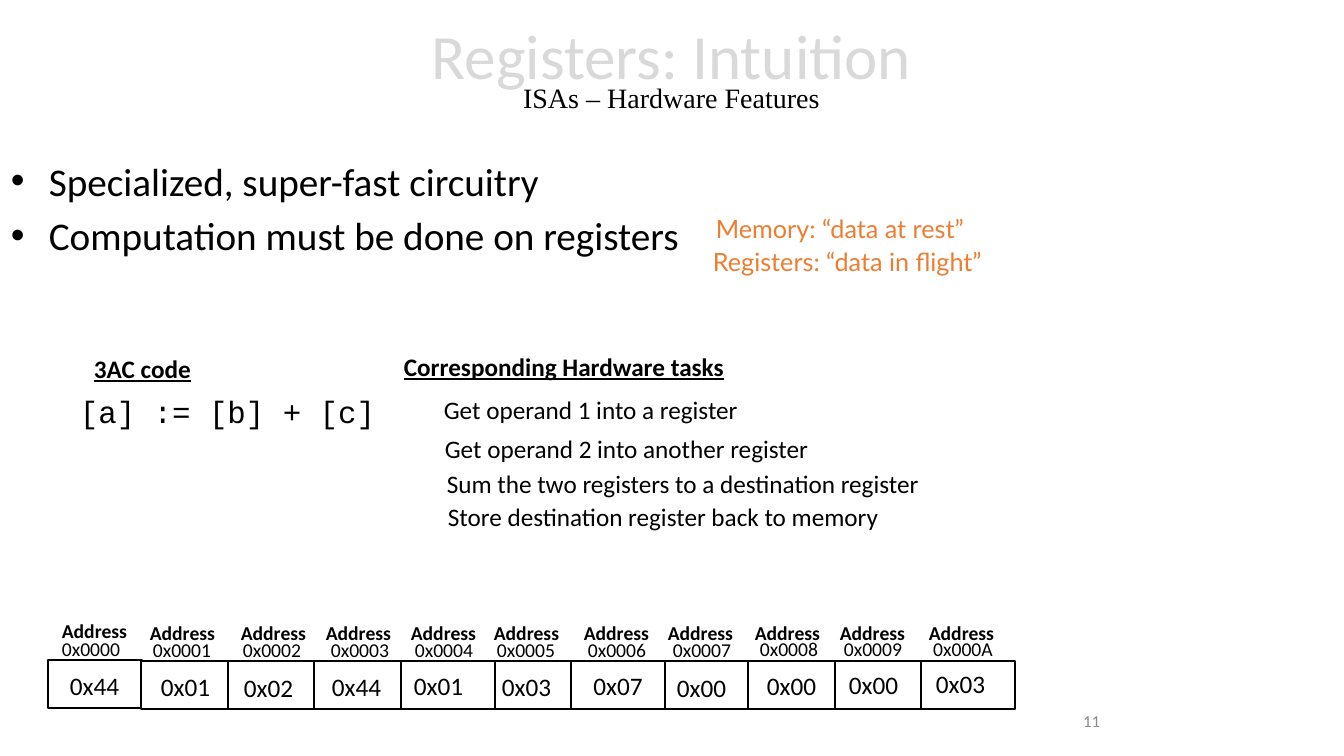
"""Build the slide on registers, their hardware tasks and a row of memory."""
from dataclasses import dataclass

from lxml import etree
from pptx import Presentation
from pptx import util as u
from pptx.dml.color import RGBColor
from pptx.enum import shapes, text


@dataclass(frozen=True)
class Theme:
    """Colours, fonts and type sizes."""
    ink: str = "000000"
    paper: str = "FFFFFF"
    heading: str = "D9D9D9"
    accent: str = "ED7D31"
    muted: str = "8C8C8C"
    sans: str = "Calibri"
    serif: str = "Times New Roman"
    mono: str = "Courier New"
    aside: str = "Lato"
    title: int = 45
    point: int = 28
    code: int = 22
    subtitle: int = 20
    body: int = 18
    label: int = 14
    number: int = 12


def px(length):
    """Turn pixels into EMU."""
    return u.Emu(round(length * 914400 / 100.8))


class Deck:
    """Holds the style and the current slide."""

    def __init__(self, theme):
        """Start a presentation with one title-only slide."""
        self.theme = theme
        self.prs = Presentation()
        self.prs.slide_width, self.prs.slide_height = px(1344), px(756)
        self.slide = self.prs.slides.add_slide(self.prs.slide_layouts[5])

    def run(self, paragraph, words, size, color=None, font=None, strong=False, underline=False):
        """Add one formatted run."""
        run = paragraph.add_run()
        run.text = words
        run.font.size = u.Pt(size)
        run.font.name = font or self.theme.sans
        run.font.color.rgb = RGBColor.from_string(color or self.theme.ink)
        run.font.bold = strong
        run.font.underline = underline

    def title(self, heading, subtitle):
        """Fill the title placeholder with a heading and a subtitle."""
        holder = self.slide.shapes.title
        holder.left, holder.top, holder.width, holder.height = px(0), px(2), px(1343), px(146)
        frame = holder.text_frame
        frame.vertical_anchor = text.MSO_ANCHOR.MIDDLE
        frame.auto_size = text.MSO_AUTO_SIZE.NONE
        line = frame.paragraphs[0]
        line.alignment = text.PP_ALIGN.CENTER
        line.line_spacing = 0.7
        self.run(line, heading, self.theme.title, self.theme.heading)
        line.add_line_break()
        self.run(line, subtitle, self.theme.subtitle, font=self.theme.serif)

    def frame(self, x, y, w, h, wrap=True):
        """Add an empty text box and return its text frame."""
        frame = self.slide.shapes.add_textbox(px(x), px(y), px(w), px(h)).text_frame
        frame.word_wrap = wrap
        return frame

    def text(self, x, y, w, h, words, size, wrap=True, **style):
        """Add a single left-aligned line of text."""
        frame = self.frame(x, y, w, h, wrap)
        frame.auto_size = text.MSO_AUTO_SIZE.SHAPE_TO_FIT_TEXT
        self.run(frame.paragraphs[0], words, size, **style)

    def label(self, x, y, w, words, strong=False):
        """Add a centred label without side margins."""
        frame = self.frame(x, y, w, 35)
        frame.margin_left = frame.margin_right = 0
        frame.paragraphs[0].alignment = text.PP_ALIGN.CENTER
        self.run(frame.paragraphs[0], words, self.theme.label, strong=strong)

    def page_number(self, x, y, w, h, number):
        """Add the right-aligned page number."""
        frame = self.frame(x, y, w, h)
        frame.vertical_anchor = text.MSO_ANCHOR.MIDDLE
        frame.paragraphs[0].alignment = text.PP_ALIGN.RIGHT
        self.run(frame.paragraphs[0], number, self.theme.number, self.theme.muted)

    def bullets(self, x, y, w, h, points):
        """Add a bulleted list."""
        frame = self.frame(x, y, w, h)
        for i, point in enumerate(points):
            line = frame.add_paragraph() if i else frame.paragraphs[0]
            line.space_before = u.Pt(5)
            props = line._p.get_or_add_pPr()
            props.set("marL", str(px(38)))
            props.set("indent", str(-px(38)))
            main = props.nsmap["a"]
            etree.SubElement(props, f"{{{main}}}buFont", typeface="Arial")
            etree.SubElement(props, f"{{{main}}}buChar", char="•")
            self.run(line, point, self.theme.point)

    def cell(self, x, y, words=""):
        """Add one memory cell."""
        cell = self.slide.shapes.add_shape(
            shapes.MSO_SHAPE.RECTANGLE, px(x), px(y), px(94), px(48))
        cell.shadow.inherit = False
        cell.fill.solid()
        cell.fill.fore_color.rgb = RGBColor.from_string(self.theme.paper)
        cell.line.color.rgb = RGBColor.from_string(self.theme.ink)
        cell.line.width = u.Pt(1)
        if words:
            cell.text_frame.vertical_anchor = text.MSO_ANCHOR.MIDDLE
            cell.text_frame.paragraphs[0].alignment = text.PP_ALIGN.CENTER
            self.run(cell.text_frame.paragraphs[0], words, self.theme.body)


TASKS = [
    (434, 389, "Get operand 1 into a register"),
    (435, 428, "Get operand 2 into another register"),
    (437, 463, "Sum the two registers to a destination register"),
    (438, 496, "Store destination register back to memory"),
]
ASIDES = [(706, 208, "Memory: “data at rest”"), (703, 241, "Registers: “data in flight”")]
HEADINGS = [(394, 346, "Corresponding Hardware tasks"), (84, 348, "3AC code")]
CELL_LEFTS = [48, 141, 228, 314, 401, 491, 571, 661, 748, 835, 921]
STACKING = [5, 0, 1, 2, 3, 4, 7, 8, 9, 10, 6]
CENTRED = 6
MEMORY = [
    (55, 614, 59, 632, 60, 665, "0x44"),
    (143, 616, 150, 633, 151, 666, "0x01"),
    (234, 616, 240, 633, 234, 667, "0x02"),
    (319, 616, 328, 633, 322, 666, "0x44"),
    (404, 616, 412, 633, 404, 665, "0x01"),
    (487, 616, 494, 633, 492, 666, "0x03"),
    (577, 616, 585, 633, 0, 0, "0x07"),
    (661, 616, 670, 633, 667, 667, "0x00"),
    (748, 616, 757, 632, 757, 665, "0x00"),
    (833, 616, 841, 632, 839, 664, "0x00"),
    (922, 616, 931, 632, 926, 663, "0x03"),
]


def main():
    """Compose and save the slide."""
    theme = Theme()
    deck = Deck(theme)
    deck.title("Registers: Intuition", "ISAs – Hardware Features")
    deck.page_number(808, 701, 302, 40, "11")
    deck.bullets(1, 152, 1217, 499, [
        "Specialized, super-fast circuitry", "Computation must be done on registers"])
    for x, y, task in TASKS:
        deck.text(x, y, 589, 40, task, theme.body)
    deck.text(70, 388, 321, 47, "[a] := [b] + [c]", theme.code, wrap=False, font=theme.mono)
    for x, y, heading in HEADINGS:
        deck.text(x, y, 446, 40, heading, theme.body, strong=True, underline=True)
    for i in STACKING:
        deck.cell(CELL_LEFTS[i], 661 if i else 660, MEMORY[i][-1] if i == CENTRED else "")
    for i, (head_x, head_y, address_x, address_y, value_x, value_y, value) in enumerate(MEMORY):
        deck.label(head_x, head_y, 79, "Address", strong=True)
        deck.label(address_x, address_y, 64, f"0x{i:04X}")
        if i != CENTRED:
            deck.text(value_x, value_y, 70, 40, value, theme.body, wrap=False)
    for x, y, aside in ASIDES:
        deck.text(x, y, 330, 40, aside, theme.body, wrap=False,
                  color=theme.accent, font=theme.aside)
    deck.prs.save("out.pptx")


if __name__ == "__main__":
    main()
